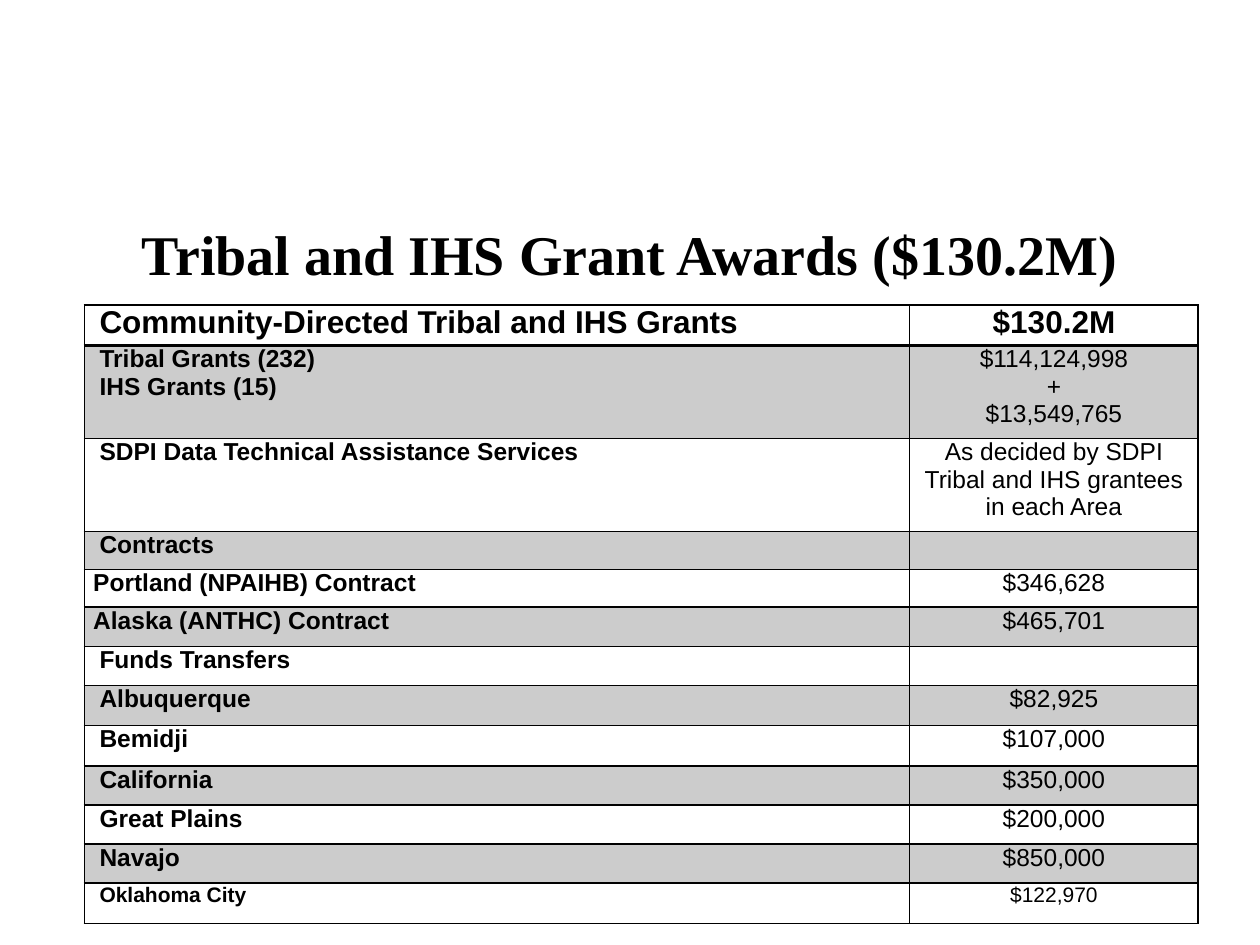
from lxml.etree import SubElement
from pptx import Presentation
from pptx.dml.color import RGBColor
from pptx.enum.text import MSO_ANCHOR, PP_ALIGN
from pptx.oxml.ns import qn
from pptx.util import Inches, Pt

BLACK = RGBColor(0, 0, 0)
TITLE = "Tribal and IHS Grant Awards ($130.2M)"
WIDTHS = [6.55, 2.29]
INDENT = 0.05
ROWS = [
    ("Community-Directed Tribal and IHS Grants", "$130.2M", 0.32),
    ("Tribal Grants (232)\nIHS Grants (15)", "$114,124,998\n+\n$13,549,765", 0.74),
    ("SDPI Data Technical Assistance Services",
     "As decided by SDPI Tribal and IHS grantees in each Area", 0.74),
    ("Contracts", "", 0.3),
    ("Portland (NPAIHB) Contract", "$346,628", 0.3),
    ("Alaska (ANTHC) Contract", "$465,701", 0.31),
    ("Funds Transfers", "", 0.31),
    ("Albuquerque", "$82,925", 0.32),
    ("Bemidji", "$107,000", 0.32),
    ("California", "$350,000", 0.31),
    ("Great Plains", "$200,000", 0.31),
    ("Navajo", "$850,000", 0.31),
    ("Oklahoma City", "$122,970", 0.32),
]


def style(para, font, size, bold):
    para.font.name = font
    para.font.size = Pt(size)
    para.font.bold = bold
    para.font.color.rgb = BLACK


def add_title(slide):
    box = slide.shapes.add_textbox(Inches(0.5), Inches(1.42), Inches(9), Inches(1.25))
    frame = box.text_frame
    frame.word_wrap = True
    frame.vertical_anchor = MSO_ANCHOR.MIDDLE
    frame.margin_bottom = Inches(0.12)
    frame.text = TITLE
    para = frame.paragraphs[0]
    para.alignment = PP_ALIGN.CENTER
    style(para, "Times New Roman", 32, True)


def add_edge(cell, side, width):
    line = SubElement(cell._tc.get_or_add_tcPr(), qn(f"a:ln{side}"), w=str(Pt(width)))
    fill = SubElement(line, qn("a:solidFill"))
    SubElement(fill, qn("a:srgbClr"), val=str(BLACK))


def paint(cell, shaded):
    if not shaded:
        cell.fill.background()
        return
    cell.fill.solid()
    cell.fill.fore_color.rgb = BLACK
    color = cell._tc.tcPr.find(qn("a:solidFill")).find(qn("a:srgbClr"))
    SubElement(color, qn("a:alpha"), val="20000")


def fill_cell(cell, text, size, bold, align, indent):
    cell.margin_left = cell.margin_right = Inches(0.07)
    cell.margin_top = cell.margin_bottom = 0
    cell.text = text
    for para in cell.text_frame.paragraphs:
        para._p.get_or_add_pPr().set("marL", str(Inches(indent)))
        para.alignment = align
        style(para, "Arial", size, bold)


def add_grid(slide):
    frame = slide.shapes.add_table(
        len(ROWS), len(WIDTHS), Inches(0.67), Inches(2.42),
        Inches(sum(WIDTHS)), Inches(sum(row[2] for row in ROWS)))
    table = frame.table
    table.horz_banding = False
    for column, width in zip(table.columns, WIDTHS):
        column.width = Inches(width)
    sizes = {0: 18, len(ROWS) - 1: 12}
    for index, (label, amount, height) in enumerate(ROWS):
        table.rows[index].height = Inches(height)
        size = sizes.get(index, 14)
        left, right = table.rows[index].cells
        indent = 0 if label.endswith(" Contract") else INDENT
        fill_cell(left, label, size, True, PP_ALIGN.LEFT, indent)
        fill_cell(right, amount, size, index == 0, PP_ALIGN.CENTER, 0)
        for cell in (left, right):
            for side in "LRTB":
                thick = (index, side) in [(0, "B"), (1, "T")]
                add_edge(cell, side, 2 if thick else 1)
            paint(cell, index % 2 == 1)


def main():
    deck = Presentation()
    deck.slide_width = Inches(10)
    deck.slide_height = Inches(7.5)
    slide = deck.slides.add_slide(deck.slide_layouts[6])
    add_title(slide)
    add_grid(slide)
    deck.save("out.pptx")


if __name__ == "__main__":
    main()
